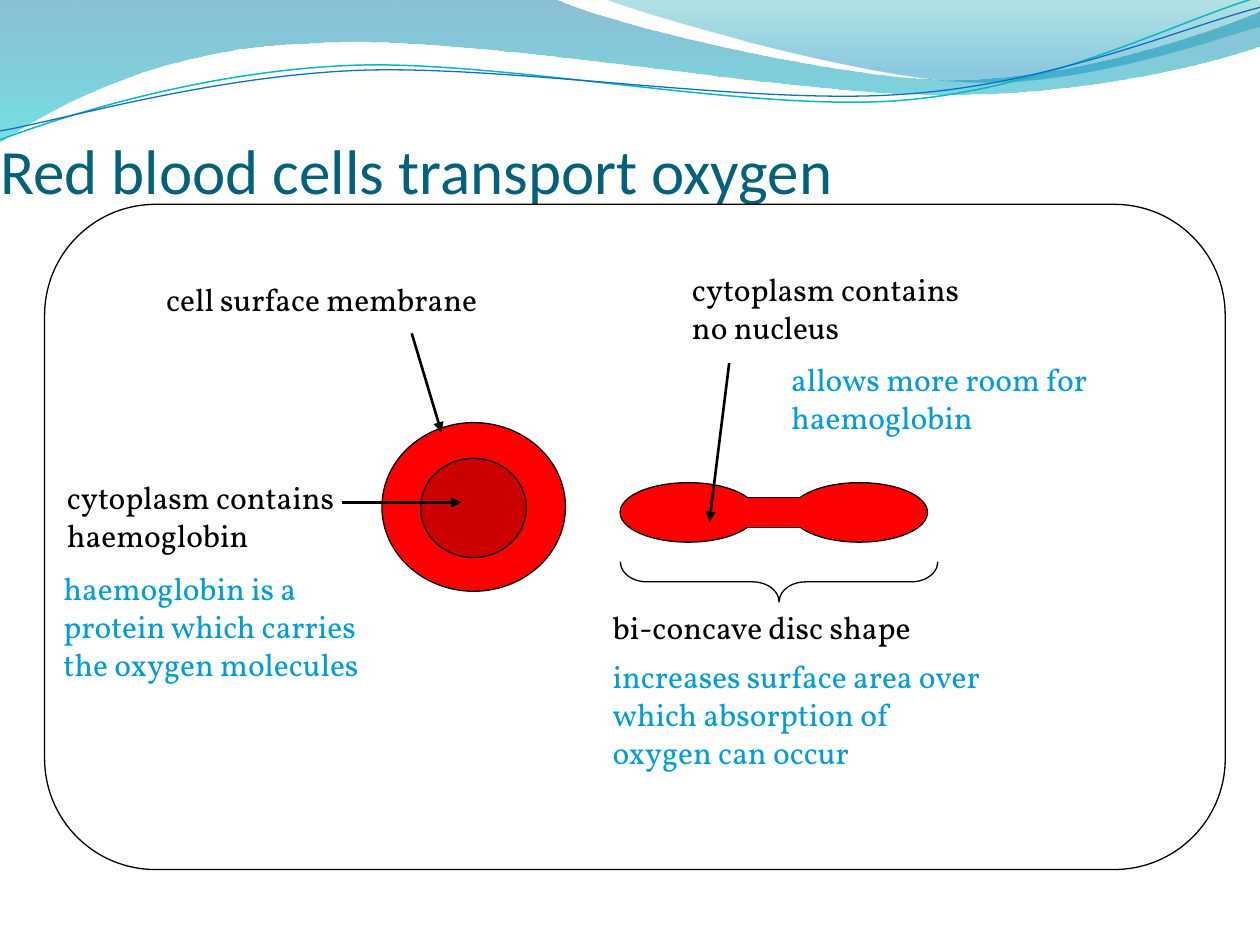
"""Build a slide on how red blood cells transport oxygen."""
from dataclasses import dataclass
from typing import Any, NamedTuple, Optional

from lxml import etree
from pptx import Presentation
from pptx import util as u
from pptx.dml.color import RGBColor
from pptx.enum import shapes, text
from pptx.oxml import ns

Point = tuple[float, float]
KIND = shapes.MSO_SHAPE


@dataclass(frozen=True)
class Theme:
    heading_font: str = "Calibri"
    body_font: str = "Vollkorn"
    heading_size: float = 36
    body_size: float = 18
    heading: str = "04617B"
    ink: str = "000000"
    note: str = "009DD9"
    paper: str = "FFFFFF"
    cell: str = "FF0000"
    hollow: str = "CC0000"
    teal: str = "0AB8BF"
    blue: str = "0F6FC6"
    thin: float = 0.75
    arrow: float = 1.5


class Box(NamedTuple):
    left: float
    top: float
    width: float
    height: float


class Stop(NamedTuple):
    position: float
    color: str
    opacity: int


class Wave(NamedTuple):
    """An outline in cm; steps hold one point (straight) or three (cubic)."""
    start: Point
    steps: list[tuple[Point, ...]]
    stops: tuple[Stop, ...] = ()
    color: str = ""
    weight: float = 0


class Part(NamedTuple):
    kind: shapes.MSO_SHAPE
    box: Box
    fill: Optional[str]
    outlined: bool = True


class Label(NamedTuple):
    words: str
    box: Box
    color: str
    wrap: bool = True


class Arrow(NamedTuple):
    start: Point
    end: Point


THEME = Theme()

WAVES = [
    Wave((0, 0), [
        ((11.18, -0.03),),
        ((12.09, 0.43), (16.87, 1.6), (19.25, 1.6)),
        ((21.67, 1.6), (24.33, 0.66), (25.4, 0.23)),
        ((25.43, 0.91),),
        ((24.97, 1.12), (22.1, 1.93), (18.95, 1.91)),
        ((15.8, 1.91), (9.7, 0.71), (6.53, 0.86)),
        ((3.25, 0.91), (1.17, 2.11), (-0.03, 2.87)),
        ((0, 0),),
    ], stops=(Stop(0, "0074A1", 45), Stop(1, "00C6CF", 55))),
    Wave((12.17, -0.03), [
        ((12.93, 0.28), (17.32, 1.57), (19.53, 1.65)),
        ((21.74, 1.75), (24.41, 0.81), (25.4, 0.53)),
        ((25.4, 0),),
        ((12.17, -0.03),),
    ], stops=(Stop(0, "00A1A9", 30), Stop(0.8, "008BBF", 45))),
    Wave((0, 2.82), [
        ((1.22, 2.36), (4.01, 1.45), (7.04, 1.32)),
        ((10.03, 1.19), (15.06, 2.26), (18.11, 2.03)),
        ((21.16, 1.8), (23.83, 0.38), (25.35, -0.05)),
    ], color=THEME.teal, weight=0.85),
    Wave((0, 2.64), [
        ((1.19, 2.44), (4.17, 1.55), (7.19, 1.42)),
        ((10.24, 1.3), (15.16, 2.13), (18.21, 1.9)),
        ((21.23, 1.7), (23.9, 0.53), (25.4, 0.15)),
    ], color=THEME.blue, weight=0.75),
]

FRAME = Part(KIND.ROUNDED_RECTANGLE, Box(0.9, 4.12, 23.8, 13.41), THEME.paper)
BRACE = Part(KIND.RIGHT_BRACE, Box(15.3, 8.53, 0.81, 6.4), None)
FRONT_VIEW = [
    Part(KIND.OVAL, Box(7.7, 8.52, 3.7, 3.4), THEME.cell),
    Part(KIND.OVAL, Box(8.48, 9.24, 2.13, 2), THEME.hollow),
]
SIDE_VIEW = [
    *(Part(KIND.OVAL, Box(left, 9.73, 2.75, 1.2), THEME.cell) for left in (12.5, 15.95)),
    Part(KIND.RECTANGLE, Box(14.76, 10.03, 1.7, 0.6), THEME.cell),
    *(Part(KIND.OVAL, Box(left, 9.96, 0.69, 0.74), THEME.cell, False) for left in (14.5, 16)),
]
ARROWS = [
    Arrow((8.3, 6.72), (8.9, 8.72)),
    Arrow((6.9, 10.13), (9.3, 10.13)),
    Arrow((14.7, 7.32), (14.3, 10.52)),
]
LABELS = [
    Label("cell surface membrane", Box(3.1, 5.53, 6.93, 1.02), THEME.ink, False),
    Label("cytoplasm contains no nucleus", Box(13.7, 5.32, 6.45, 1.78), THEME.ink),
    Label("cytoplasm contains haemoglobin", Box(1.1, 9.52, 5.99, 1.78), THEME.ink),
    Label("bi-concave disc shape", Box(12.1, 12.13, 6.78, 1.02), THEME.ink, False),
    Label("allows more room for haemoglobin", Box(15.7, 7.13, 6.78, 1.78), THEME.note),
    Label("increases surface area over which absorption of oxygen can occur",
          Box(12.1, 13.13, 8, 2.54), THEME.note),
    Label("haemoglobin is a protein which carries the oxygen molecules",
          Box(1.03, 11.35, 7.16, 2.54), THEME.note),
]


def lengths(values: tuple[float, ...]) -> list[u.Cm]:
    """Turn centimetres into slide lengths."""
    return [u.Cm(value) for value in values]


def stroke(line: Any, color: str, weight: float) -> None:
    """Give a line its colour and weight."""
    line.color.rgb = RGBColor.from_string(color)
    line.width = u.Pt(weight)


def bend(outline: Any, steps: list[tuple[Point, ...]]) -> None:
    """Merge each three-point step of an outline into one cubic curve."""
    segments = iter(list(outline.element.spPr.iter(ns.qn("a:lnTo"))))
    for step in steps:
        first, *others = [next(segments) for _ in step]
        if others:
            first.tag = ns.qn("a:cubicBezTo")
        for other in others:
            first.append(other[0])
            other.getparent().remove(other)


def draw_wave(canvas: Any, wave: Wave) -> None:
    """Draw a translucent band or a thin curve."""
    points = [tuple(lengths(point)) for step in wave.steps for point in step]
    builder = canvas.build_freeform(*lengths(wave.start))
    builder.add_line_segments(points, close=bool(wave.stops))
    outline = builder.convert_to_shape()
    bend(outline, wave.steps)
    outline.shadow.inherit = False
    if not wave.stops:
        outline.fill.background()
        stroke(outline.line, wave.color, wave.weight)
        return
    outline.line.fill.background()
    outline.fill.gradient()
    outline.fill.gradient_angle = 270
    for mark, stop in zip(outline.fill.gradient_stops, wave.stops):
        mark.position = stop.position
        mark.color.rgb = RGBColor.from_string(stop.color)
    colors = outline.element.spPr.iter(ns.qn("a:srgbClr"))
    for color, stop in zip(colors, wave.stops):
        etree.SubElement(color, ns.qn("a:alpha")).set("val", str(stop.opacity * 1000))


def draw_part(canvas: Any, part: Part) -> Any:
    """Draw a preset shape and return it."""
    drawn = canvas.add_shape(part.kind, *lengths(part.box))
    drawn.shadow.inherit = False
    if part.fill:
        drawn.fill.solid()
        drawn.fill.fore_color.rgb = RGBColor.from_string(part.fill)
    else:
        drawn.fill.background()
    if part.outlined:
        stroke(drawn.line, THEME.ink, THEME.thin)
    else:
        drawn.line.fill.background()
    return drawn


def draw_arrow(canvas: Any, arrow: Arrow) -> None:
    """Draw a straight pointer with a triangular head."""
    pointer = canvas.add_connector(shapes.MSO_CONNECTOR.STRAIGHT,
                                   *lengths(arrow.start + arrow.end))
    stroke(pointer.line, THEME.ink, THEME.arrow)
    outline = pointer.element.spPr.find(ns.qn("a:ln"))
    etree.SubElement(outline, ns.qn("a:tailEnd")).set("type", "triangle")
    etree.SubElement(pointer.element.spPr, ns.qn("a:effectLst"))


def write(frame: Any, words: str, font: str, size: float, color: str) -> None:
    """Put left-aligned words in a text frame."""
    frame.text = words
    line = frame.paragraphs[0]
    line.alignment = text.PP_ALIGN.LEFT
    for run in line.runs:
        run.font.name, run.font.size = font, u.Pt(size)
        run.font.color.rgb = RGBColor.from_string(color)


def draw_label(canvas: Any, label: Label) -> None:
    """Draw a text label."""
    frame = canvas.add_textbox(*lengths(label.box)).text_frame
    frame.word_wrap = label.wrap
    frame.auto_size = text.MSO_AUTO_SIZE.SHAPE_TO_FIT_TEXT
    write(frame, label.words, THEME.body_font, THEME.body_size, label.color)


def draw_title(title: Any, words: str) -> None:
    """Place and format the slide title."""
    title.left, title.top, title.width, title.height = lengths(Box(0, 0.99, 22.86, 3.18))
    frame = title.text_frame
    frame.margin_left = frame.margin_right = frame.margin_bottom = 0
    frame.vertical_anchor = text.MSO_ANCHOR.BOTTOM
    frame.auto_size = text.MSO_AUTO_SIZE.NONE
    write(frame, words, THEME.heading_font, THEME.heading_size, THEME.heading)


def main() -> None:
    """Build and save the slide."""
    deck = Presentation()
    deck.slide_width, deck.slide_height = lengths((25.4, 19.05))
    canvas = deck.slides.add_slide(deck.slide_layouts[5]).shapes
    draw_title(canvas.title, "Red blood cells transport oxygen")
    for wave in WAVES:
        draw_wave(canvas, wave)
    draw_part(canvas, FRAME)
    for view in (FRONT_VIEW, SIDE_VIEW):
        group = canvas.add_group_shape()
        for part in view:
            draw_part(group.shapes, part)
    brace = draw_part(canvas, BRACE)
    brace.rotation = 90
    brace.adjustments[0] = 0.66
    for arrow in ARROWS:
        draw_arrow(canvas, arrow)
    for label in LABELS:
        draw_label(canvas, label)
    deck.save("out.pptx")


if __name__ == "__main__":
    main()
